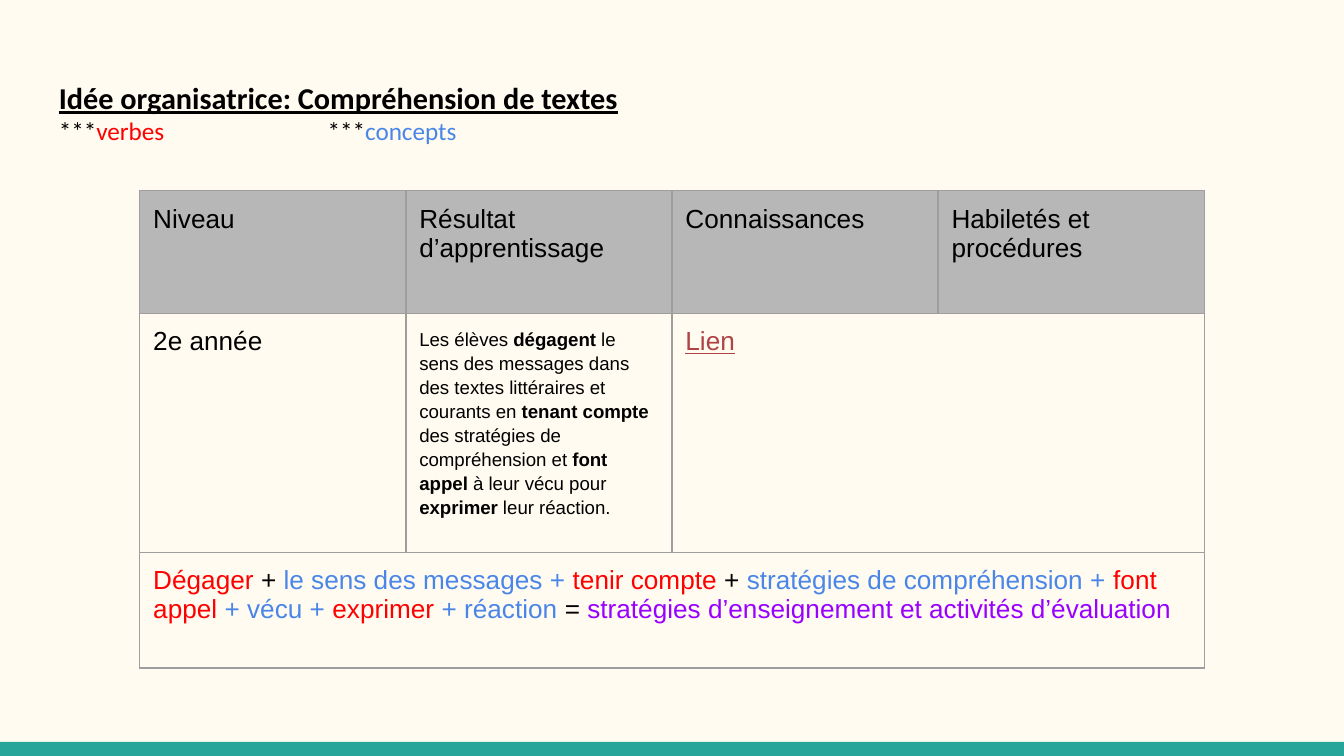
from lxml import etree
from pptx import Presentation
from pptx.dml.color import RGBColor
from pptx.enum import shapes, text
from pptx.oxml import ns
from pptx.util import Inches, Pt

THEME = {
    "paper": "FFFBF0", "band": "26A69A", "header": "B7B7B7", "border": "9E9E9E",
    "ink": "000000", "verb": "FF0000", "concept": "4A86E8",
    "result": "9900FF", "link": "AF4345",
    "title_font": "Calibri", "table_font": "Arial",
    "title": 16.2, "legend": 13.5, "cell": 14, "detail": 10,
}

TITLE = [("Idée organisatrice: Compréhension de textes", "ink", "bu")]
LEGEND = [("***", "ink", ""), ("verbes", "verb", ""),
          ("\t\t***", "ink", ""), ("concepts", "concept", "")]
HEADERS = ["Niveau", "Résultat d’apprentissage", "Connaissances", "Habiletés et procédures"]
LEVEL = [("2e année", "ink", "")]
OUTCOME = [
    ("Les élèves ", "ink", ""), ("dégagent ", "ink", "b"),
    ("le sens des messages dans des textes littéraires et courants en ", "ink", ""),
    ("tenant compte", "ink", "b"),
    (" des stratégies de compréhension et ", "ink", ""),
    ("font appel", "ink", "b"), (" à leur vécu pour ", "ink", ""),
    ("exprimer", "ink", "b"), (" leur réaction.", "ink", ""),
]
LINK = [("Lien", "link", "u")]
FORMULA = [
    ("Dégager", "verb", ""), (" + ", "ink", ""),
    ("le sens des messages +", "concept", ""), (" tenir compte", "verb", ""),
    (" + ", "ink", ""), ("stratégies de compréhension + ", "concept", ""),
    ("font appel", "verb", ""), (" + vécu + ", "concept", ""),
    ("exprimer ", "verb", ""), ("+ réaction ", "concept", ""), ("= ", "ink", ""),
    ("stratégies d’enseignement et activités d’évaluation", "result", ""),
]
PAGE_WIDTH = Inches(10)
PAGE_HEIGHT = PAGE_WIDTH * 9 // 16
COLUMN_WIDTH = 1.98
ROW_HEIGHTS = [0.91, 1.78, 0.86]
MARGIN = Inches(0.1)


def color(name):
    return RGBColor.from_string(THEME[name])


def write(para, spans, font, size):
    for words, ink, style in spans:
        span = para.add_run()
        span.text = words
        span.font.name = THEME[font]
        span.font.size = Pt(THEME[size])
        span.font.color.rgb = color(ink)
        span.font.bold = "b" in style
        span.font.underline = "u" in style


def set_margins(target):
    for side in ("left", "top", "right", "bottom"):
        setattr(target, f"margin_{side}", MARGIN)


def add_tabs(para, stops):
    tabs = etree.SubElement(para._p.get_or_add_pPr(), ns.qn("a:tabLst"))
    for stop in stops:
        etree.SubElement(tabs, ns.qn("a:tab"), pos=str(Inches(stop)), algn="l")


def add_borders(cell):
    properties = cell._tc.get_or_add_tcPr()
    for index, side in enumerate(("lnL", "lnR", "lnT", "lnB")):
        line = etree.Element(ns.qn(f"a:{side}"), w=str(Pt(0.75)))
        fill = etree.SubElement(line, ns.qn("a:solidFill"))
        etree.SubElement(fill, ns.qn("a:srgbClr"), val=THEME["border"])
        properties.insert(index, line)


def add_band(page):
    top = Inches(5.52)
    band = page.shapes.add_shape(
        shapes.MSO_SHAPE.RECTANGLE, 0, top, PAGE_WIDTH, PAGE_HEIGHT - top)
    band.shadow.inherit = False
    band.fill.solid()
    band.fill.fore_color.rgb = color("band")
    band.line.fill.background()


def add_heading(page):
    box = page.shapes.add_textbox(Inches(0.34), Inches(0.49), Inches(9.32), Inches(0.67))
    frame = box.text_frame
    frame.word_wrap = True
    frame.vertical_anchor = text.MSO_ANCHOR.TOP
    set_margins(frame)
    write(frame.paragraphs[0], TITLE, "title_font", "title")
    legend = frame.add_paragraph()
    add_tabs(legend, (1, 2))
    write(legend, LEGEND, "title_font", "legend")


def add_grid(page):
    columns = len(HEADERS)
    table = page.shapes.add_table(
        len(ROW_HEIGHTS), columns, Inches(1.04), Inches(1.42),
        Inches(COLUMN_WIDTH * columns), Inches(sum(ROW_HEIGHTS))).table
    table.first_row = table.horz_banding = False
    for column in table.columns:
        column.width = Inches(COLUMN_WIDTH)
    for row, height in zip(table.rows, ROW_HEIGHTS):
        row.height = Inches(height)
    for cell in table.iter_cells():
        set_margins(cell)
        cell.fill.background()
        add_borders(cell)

    for index, header in enumerate(HEADERS):
        cell = table.cell(0, index)
        cell.fill.solid()
        cell.fill.fore_color.rgb = color("header")
        write(cell.text_frame.paragraphs[0], [(header, "ink", "")], "table_font", "cell")

    table.cell(1, 2).merge(table.cell(1, 3))
    table.cell(2, 0).merge(table.cell(2, columns - 1))
    for row, column, spans, size in (
            (1, 0, LEVEL, "cell"), (1, 1, OUTCOME, "detail"),
            (1, 2, LINK, "cell"), (2, 0, FORMULA, "cell")):
        para = table.cell(row, column).text_frame.paragraphs[0]
        write(para, spans, "table_font", size)
        if size == "detail":
            para.line_spacing = 1.15


def main():
    deck = Presentation()
    deck.slide_width, deck.slide_height = PAGE_WIDTH, PAGE_HEIGHT
    page = deck.slides.add_slide(deck.slide_layouts[6])
    page.background.fill.solid()
    page.background.fill.fore_color.rgb = color("paper")
    add_band(page)
    add_heading(page)
    add_grid(page)
    deck.save("out.pptx")


if __name__ == "__main__":
    main()
